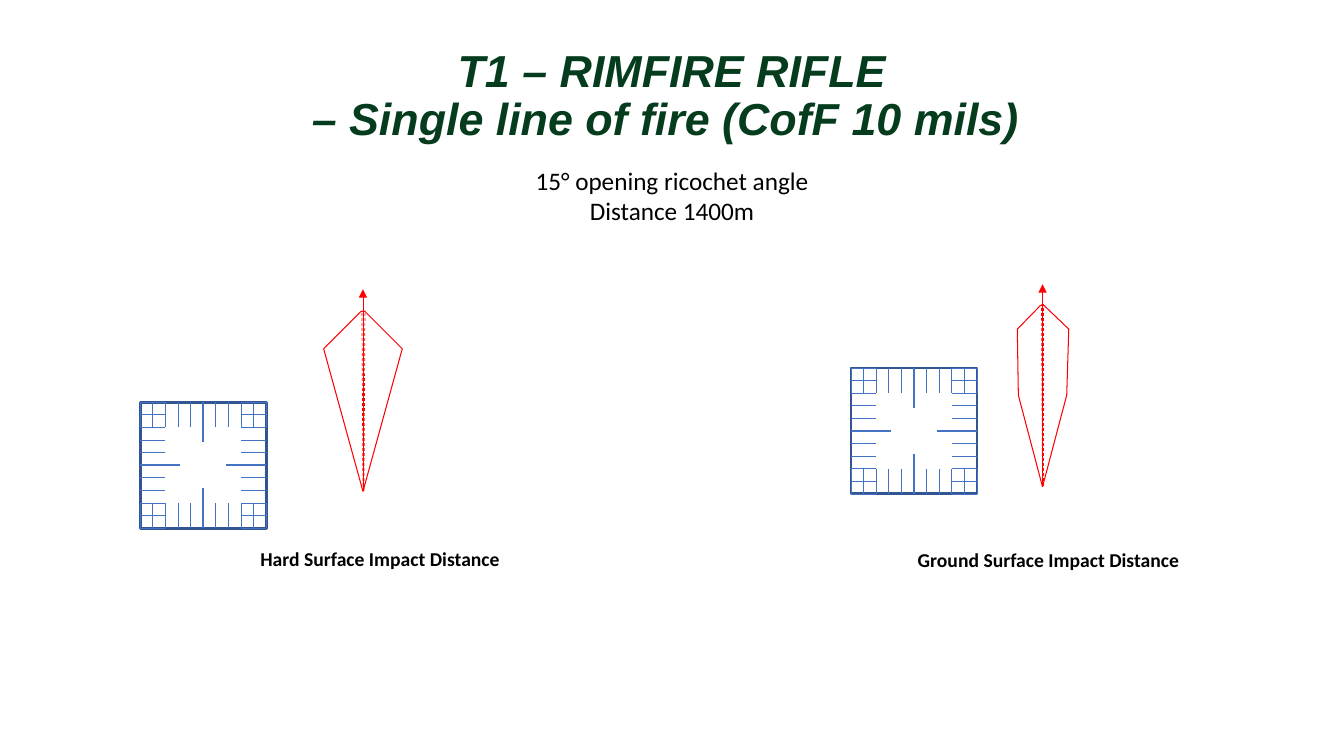
from dataclasses import dataclass
from itertools import pairwise

from lxml.etree import SubElement
from pptx import Presentation
from pptx.dml.color import RGBColor
from pptx.enum.dml import MSO_LINE
from pptx.enum.shapes import MSO_CONNECTOR, MSO_SHAPE
from pptx.enum.text import MSO_ANCHOR, MSO_AUTO_SIZE, PP_ALIGN
from pptx.oxml.ns import qn
from pptx.shapes.autoshape import Shape
from pptx.shapes.connector import Connector
from pptx.shapes.shapetree import GroupShapes
from pptx.slide import Slide
from pptx.util import Pt

PX = 4572  # EMU per px, 200 px to the inch

BLACK = RGBColor(0x00, 0x00, 0x00)
GREEN = RGBColor(0x05, 0x3C, 0x1E)
RED = RGBColor(0xFF, 0x00, 0x00)
BLUE = RGBColor(0x44, 0x72, 0xC4)
DARK_BLUE = RGBColor(0x32, 0x54, 0x91)

# Map square: a frame with ticks along all four sides
SQUARE_SIDE = 250
TICK_COUNT = 10
TICK_GAP = SQUARE_SIDE // TICK_COUNT
TICK_LENGTH = 50
MIDDLE_TICK_LENGTH = 80

Point = tuple[int, int]


@dataclass(frozen=True)
class Label:
    box: tuple[int, int, int, int]
    lines: tuple[str, ...]
    size: int
    font: str = "Calibri"
    color: RGBColor = BLACK
    bold: bool = False
    italic: bool = False
    line_spacing: float = 1.0


@dataclass(frozen=True)
class DangerArea:
    square: Point
    outline: tuple[Point, ...]
    fire_line: tuple[Point, Point]
    dispersion: tuple[tuple[Point, Point], ...]


TITLE = Label(
    (0, 86, 2666, 244),
    ("T1 – RIMFIRE RIFLE", "– Single line of fire (CofF 10 mils) "),
    32, "Arial", GREEN, bold=True, italic=True, line_spacing=0.9,
)
LABELS = (
    Label((376, 1076, 756, 68), ("Hard Surface Impact Distance",), 14, bold=True),
    Label((1702, 1078, 756, 114), ("Ground Surface Impact Distance",), 14, bold=True),
    Label((924, 318, 818, 142), ("15° opening ricochet angle", "Distance 1400m"), 18),
)
GROUND = DangerArea(
    square=(1688, 730),
    outline=((2068, 966), (2020, 784), (2018, 653), (2064, 606),
             (2071, 606), (2120, 653), (2116, 784)),
    fire_line=((2068, 966), (2068, 564)),
    dispersion=(((2070, 964), (2070, 604)), ((2068, 964), (2066, 604))),
)
HARD = DangerArea(
    square=(278, 798),
    outline=((720, 975), (642, 692), (716, 618), (724, 618), (798, 692)),
    fire_line=((720, 974), (720, 574)),
    dispersion=(((722, 974), (724, 616)), ((720, 974), (718, 616))),
)


def write_label(shape: Shape, label: Label) -> None:
    frame = shape.text_frame
    frame.word_wrap = True
    frame.auto_size = MSO_AUTO_SIZE.NONE
    frame.vertical_anchor = MSO_ANCHOR.TOP
    frame.text = "\n".join(label.lines)
    for para in frame.paragraphs:
        para.alignment = PP_ALIGN.CENTER
        para.line_spacing = label.line_spacing
        para.space_before = Pt(0)
        para.font.name = label.font
        para.font.size = Pt(label.size)
        para.font.bold = label.bold
        para.font.italic = label.italic
        para.font.color.rgb = label.color


def add_title(page: Slide, label: Label) -> None:
    title = page.shapes.title
    title.left, title.top, title.width, title.height = (n * PX for n in label.box)
    write_label(title, label)


def add_label(page: Slide, label: Label) -> None:
    write_label(page.shapes.add_textbox(*(n * PX for n in label.box)), label)


def add_line(shapes: GroupShapes, start: Point, end: Point,
             color: RGBColor, width: float) -> Connector:
    line = shapes.add_connector(
        MSO_CONNECTOR.STRAIGHT, *(n * PX for n in (*start, *end)))
    line.line.color.rgb = color
    line.line.width = Pt(width)
    SubElement(line._element.spPr, qn("a:effectLst"))
    return line


def add_map_square(shapes: GroupShapes, corner: Point) -> None:
    left, top = corner
    right, bottom = left + SQUARE_SIDE, top + SQUARE_SIDE
    frame = shapes.add_shape(
        MSO_SHAPE.RECTANGLE, *(n * PX for n in (left, top, SQUARE_SIDE, SQUARE_SIDE)))
    frame.shadow.inherit = False
    frame.fill.background()
    frame.line.color.rgb = DARK_BLUE
    frame.line.width = Pt(2)

    for index in range(TICK_COUNT + 1):
        middle = index == TICK_COUNT // 2
        length = MIDDLE_TICK_LENGTH if middle else TICK_LENGTH
        width = 1.75 if middle else 0.5
        x, y = left + index * TICK_GAP, top + index * TICK_GAP
        for start, end in (
            ((left, y), (left + length, y)),
            ((right, y), (right - length, y)),
            ((x, top), (x, top + length)),
            ((x, bottom), (x, bottom - length)),
        ):
            add_line(shapes, start, end, BLUE, width)


def add_danger_area(page: Slide, area: DangerArea) -> None:
    shapes = page.shapes.add_group_shape().shapes
    add_map_square(shapes, area.square)
    # Line of fire with its arrowhead
    arrow = add_line(shapes, *area.fire_line, RED, 0.5)
    SubElement(arrow.line._get_or_add_ln(), qn("a:tailEnd"), type="triangle")
    # Outline of the area
    for start, end in pairwise((*area.outline, area.outline[0])):
        add_line(shapes, start, end, RED, 0.75)
    # Cone of fire
    for start, end in area.dispersion:
        add_line(shapes, start, end, RED, 0.5).line.dash_style = MSO_LINE.DASH


def main() -> None:
    deck = Presentation()
    deck.slide_width, deck.slide_height = 2666 * PX, 1500 * PX
    page = deck.slides.add_slide(deck.slide_layouts.get_by_name("Title Only"))
    add_title(page, TITLE)
    for label in LABELS:
        add_label(page, label)
    for area in (GROUND, HARD):
        add_danger_area(page, area)
    deck.save("out.pptx")


if __name__ == "__main__":
    main()
